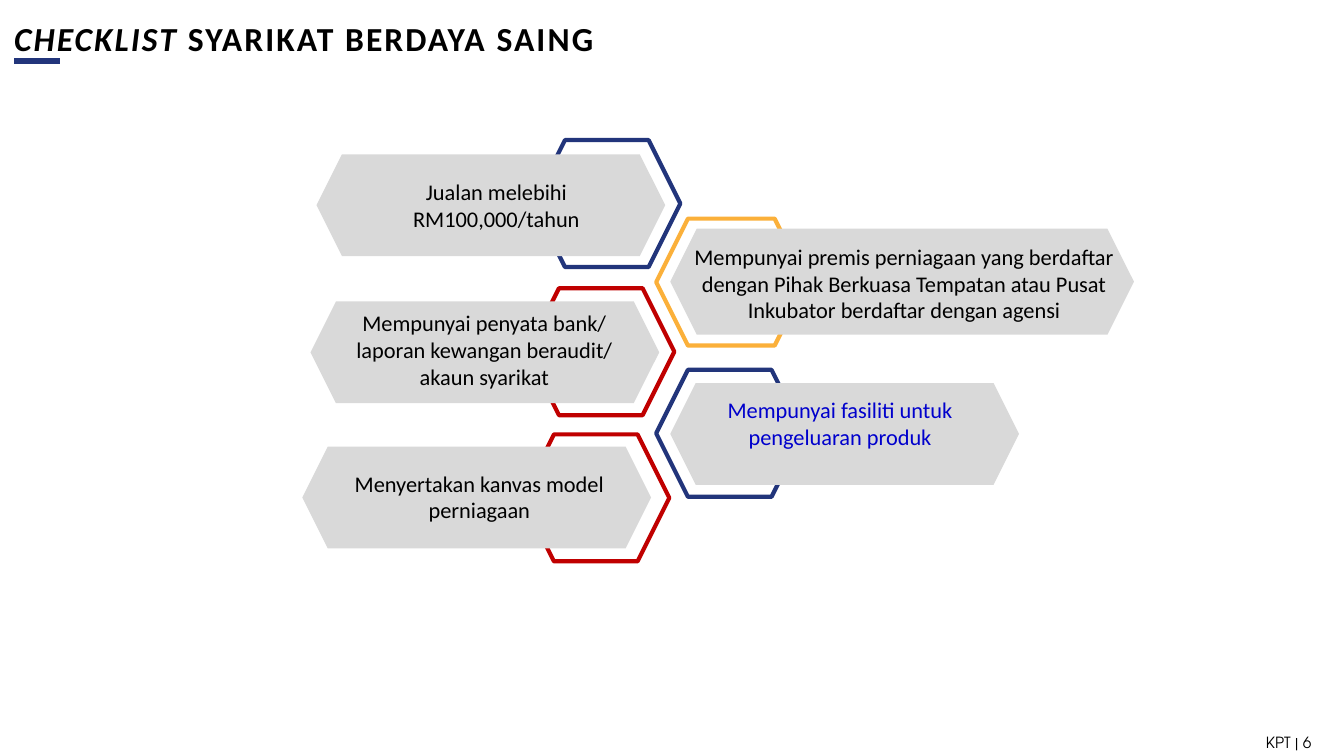
from pptx import Presentation, util as u
from pptx.dml.color import RGBColor
from pptx.enum import shapes, text

Pt = u.Pt
NAVY, RED, GOLD = "22357B", "C00000", "FBB03A"
GREY, BLACK, BLUE = "D9D9D9", "000000", "0000CC"
RING, BAR, LABEL = (105.1, 90.7), (249.1, 72.7), (232.6, 46)

# ring colour, ring, bar and label boxes, text colour, wording
ITEMS = [
    (NAVY, (380.9, 100.1, *RING), (226.1, 110.2, *BAR), (238.3, 123.8, *LABEL),
     BLACK, "Jualan melebihi RM100,000/tahun"),
    (RED, (376.6, 205.9, *RING), (221.8, 215.3, *BAR), (229.7, 217.4, 232.6, 65.5),
     BLACK, "Mempunyai penyata bank/ laporan kewangan beraudit/ akaun syarikat"),
    (GOLD, (468.7, 156.2, 107.3, 90.7), (478.8, 163.4, 331.2, 75.6),
     (486, 169.9, 319.7, 65.5), BLACK,
     "Mempunyai premis perniagaan yang berdaftar dengan Pihak Berkuasa "
     "Tempatan atau Pusat Inkubator berdaftar dengan agensi"),
    (NAVY, (468.7, 264.2, *RING), (478.8, 273.6, *BAR), (483.8, 279.4, *LABEL),
     BLUE, "Mempunyai fasiliti untuk pengeluaran produk"),
    (RED, (373, 310.3, *RING), (216, 319, *BAR), (226.1, 331.9, *LABEL),
     BLACK, "Menyertakan kanvas model perniagaan"),
]


def rgb(code):
    return RGBColor.from_string(code)


def points(box):
    return [Pt(n) for n in box]


def add_hex(group, box, fill=None, line=None):
    form = group.shapes.add_shape(shapes.MSO_SHAPE.HEXAGON, *points(box))
    form.shadow.inherit = False
    if fill:
        form.fill.solid()
        form.fill.fore_color.rgb = rgb(fill)
    else:
        form.fill.background()
    if line:
        form.line.color.rgb = rgb(line)
        form.line.width = Pt(3)
    else:
        form.line.fill.background()


def add_text(owner, box, runs, size, color=BLACK, face="Calibri",
             align=None, anchor=text.MSO_ANCHOR.TOP):
    """Add a one-paragraph text box and return its frame."""
    frame = owner.shapes.add_textbox(*points(box)).text_frame
    frame.word_wrap = True
    frame.vertical_anchor = anchor
    para = frame.paragraphs[0]
    para.alignment = align
    for words in runs:
        para.add_run().text = words
    para.font.size = Pt(size)
    para.font.name = face
    para.font.color.rgb = rgb(color)
    return frame


def add_title(slide):
    frame = add_text(slide, (10.1, 10.8, 451.4, 33.1),
                     ["CHECKLIST", " SYARIKAT BERDAYA SAING"], 24,
                     anchor=text.MSO_ANCHOR.MIDDLE)
    frame.margin_left = frame.margin_right = 0
    para = frame.paragraphs[0]
    para.font.bold = True
    para.runs[0].font.italic = True
    for run in para.runs:
        run.font._element.set("spc", "150")


def add_rule(slide):
    rule = slide.shapes.add_connector(
        shapes.MSO_CONNECTOR.STRAIGHT, *points((10.1, 43.5, 43.2, 43.5)))
    rule.line.color.rgb = rgb(NAVY)
    rule.line.width = Pt(4.5)
    props = rule._element.spPr
    props.append(props.makeelement(
        "{http://schemas.openxmlformats.org/drawingml/2006/main}effectLst", {}))


def add_item(slide, tint, ring, bar, label, color, words):
    group = slide.shapes.add_group_shape()
    add_hex(group, ring, line=tint)
    add_hex(group, bar, fill=GREY)
    add_text(group, label, [words], 16, color, align=text.PP_ALIGN.CENTER)


def main():
    deck = Presentation()
    deck.slide_width, deck.slide_height = Pt(960), Pt(540)
    slide = deck.slides.add_slide(deck.slide_layouts[6])
    add_title(slide)
    add_rule(slide)
    add_text(slide, (715.7, 519.8, 228.2, 21.6), ["KPT | 6"], 11,
             face="TeX Gyre Adventor", align=text.PP_ALIGN.RIGHT,
             anchor=text.MSO_ANCHOR.MIDDLE)
    for item in ITEMS:
        add_item(slide, *item)
    deck.save("out.pptx")


if __name__ == "__main__":
    main()
